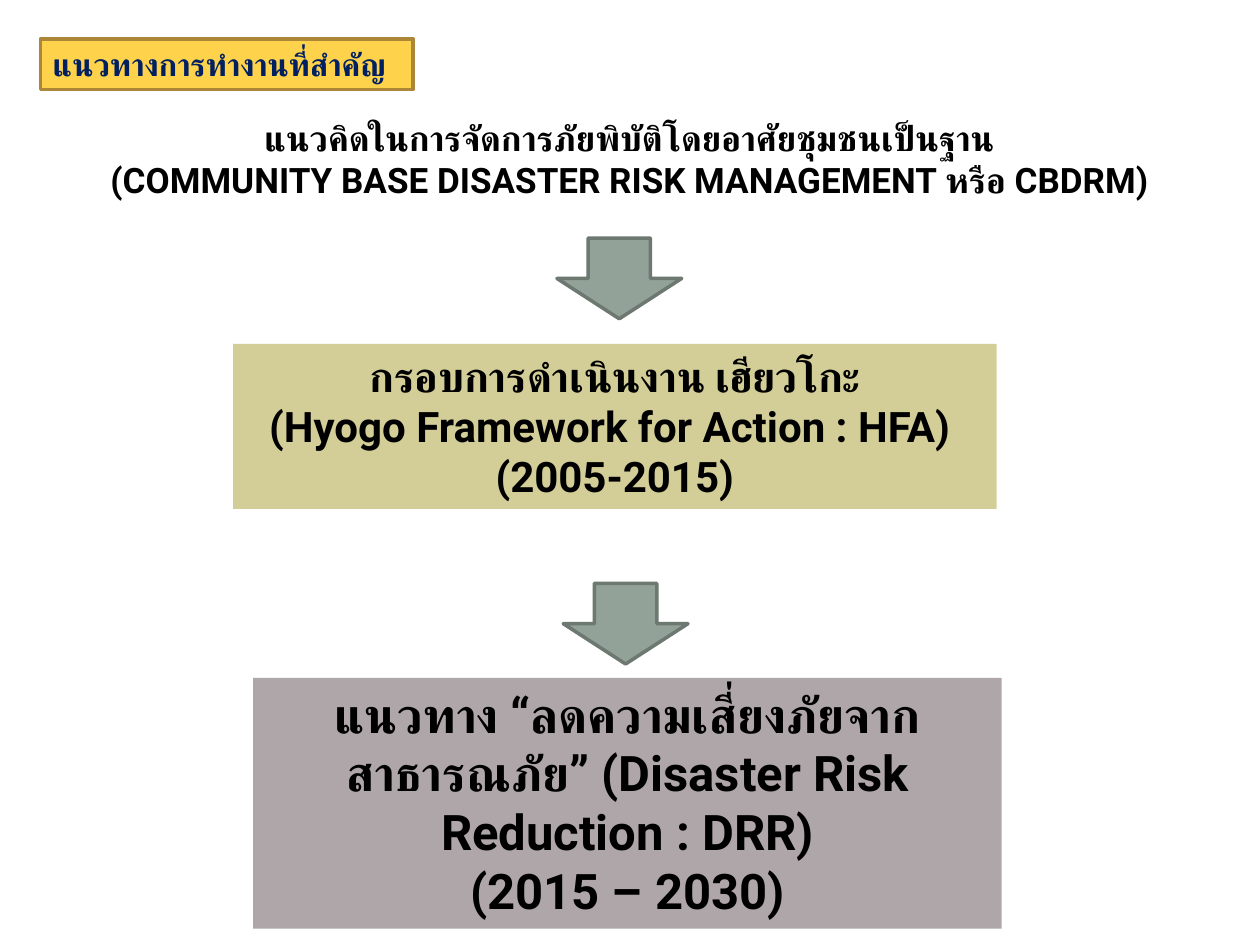
from dataclasses import dataclass

from lxml.etree import SubElement
from pptx import Presentation
from pptx.dml.color import RGBColor
from pptx.enum.shapes import MSO_SHAPE
from pptx.enum.text import MSO_ANCHOR, MSO_AUTO_SIZE, PP_ALIGN
from pptx.oxml.ns import qn
from pptx.util import Inches, Pt


@dataclass(frozen=True)
class Theme:
    """Colours, type sizes and font of the slide."""

    font: str = "Roboto"
    ink: str = "000000"
    navy: str = "002060"
    gold: str = "FFC000"
    gold_edge: str = "AC8639"
    arrow: str = "93A299"
    arrow_edge: str = "6D7871"
    sand: str = "D3CE98"
    mauve: str = "AFA6AA"
    label_size: int = 18
    title_size: int = 20
    framework_size: int = 24
    goal_size: int = 28
    edge: int = 2


THEME = Theme()
WIDTH, HEIGHT = 10, 7.5
ARROW_SIZE = (0.99, 0.64)


def place(shape, box):
    """Move a shape to a box of left, top, width and height in inches."""
    shape.left, shape.top, shape.width, shape.height = map(Inches, box)


def write(shape, lines, size, color=THEME.ink, align=PP_ALIGN.CENTER,
          anchor=MSO_ANCHOR.TOP, wrap=True):
    """Fill a shape with one formatted paragraph for each line."""
    frame = shape.text_frame
    frame.auto_size = MSO_AUTO_SIZE.NONE
    frame.word_wrap = wrap
    frame.vertical_anchor = anchor
    for index, line in enumerate(lines):
        paragraph = frame.paragraphs[0] if index == 0 else frame.add_paragraph()
        paragraph.text = line
        paragraph.alignment = align
        for run in paragraph.runs:
            run.font.name = THEME.font
            run.font.size = Pt(size)
            run.font.bold = True
            run.font.color.rgb = RGBColor.from_string(color)
            SubElement(run.font._element, qn("a:cs"), typeface=THEME.font)


def add_block(slide, kind, box, fill, edge=None, opacity=100):
    """Add a flat preset shape with an optional outline and opacity."""
    shape = slide.shapes.add_shape(kind, *map(Inches, box))
    shape.shadow.inherit = False
    shape.fill.solid()
    shape.fill.fore_color.rgb = RGBColor.from_string(fill)
    if opacity < 100:
        color = shape.fill._xPr.find(qn("a:solidFill"))[0]
        SubElement(color, qn("a:alpha"), val=str(opacity * 1000))
    if edge:
        shape.line.color.rgb = RGBColor.from_string(edge)
        shape.line.width = Pt(THEME.edge)
    else:
        shape.line.fill.background()
    return shape


def add_title(slide, box):
    """Place the two-line title in its placeholder."""
    title = slide.shapes.title
    place(title, box)
    write(title, ["แนวคิดในการจัดการภัยพิบัติโดยอาศัยชุมชนเป็นฐาน\v"
                  "(COMMUNITY BASE DISASTER RISK MANAGEMENT หรือ CBDRM)"],
          THEME.title_size, anchor=MSO_ANCHOR.MIDDLE)


def add_label(slide, box):
    """Add the gold section label."""
    label = add_block(slide, MSO_SHAPE.RECTANGLE, box, THEME.gold,
                      THEME.gold_edge, opacity=70)
    write(label, ["แนวทางการทำงานที่สำคัญ"], THEME.label_size, THEME.navy,
          align=PP_ALIGN.LEFT, wrap=False)


def add_step(slide, box, arrow_corner, lines, size, fill):
    """Add a step panel and the arrow that leads down to it."""
    add_block(slide, MSO_SHAPE.DOWN_ARROW, (*arrow_corner, *ARROW_SIZE),
              THEME.arrow, THEME.arrow_edge)
    panel = add_block(slide, MSO_SHAPE.RECTANGLE, box, fill)
    write(panel, lines, size)


def main():
    """Build the slide and save it."""
    presentation = Presentation()
    presentation.slide_width = Inches(WIDTH)
    presentation.slide_height = Inches(HEIGHT)
    slide = presentation.slides.add_slide(presentation.slide_layouts[5])
    add_title(slide, (0.48, 0.69, 9.03, 1.14))
    add_step(slide, (1.85, 2.73, 6.06, 1.31), (4.42, 1.89),
             ["กรอบการดำเนินงาน เฮียวโกะ",
              "(Hyogo Framework for Action : HFA) ",
              "(2005-2015)"],
             THEME.framework_size, THEME.sand)
    add_step(slide, (2.01, 5.38, 5.94, 1.99), (4.47, 4.63),
             ["แนวทาง “ลดความเสี่ยงภัยจากสาธารณภัย” (Disaster Risk Reduction : DRR)",
              "(2015 – 2030)"],
             THEME.goal_size, THEME.mauve)
    add_label(slide, (0.32, 0.31, 2.96, 0.4))
    presentation.save("out.pptx")


if __name__ == "__main__":
    main()
